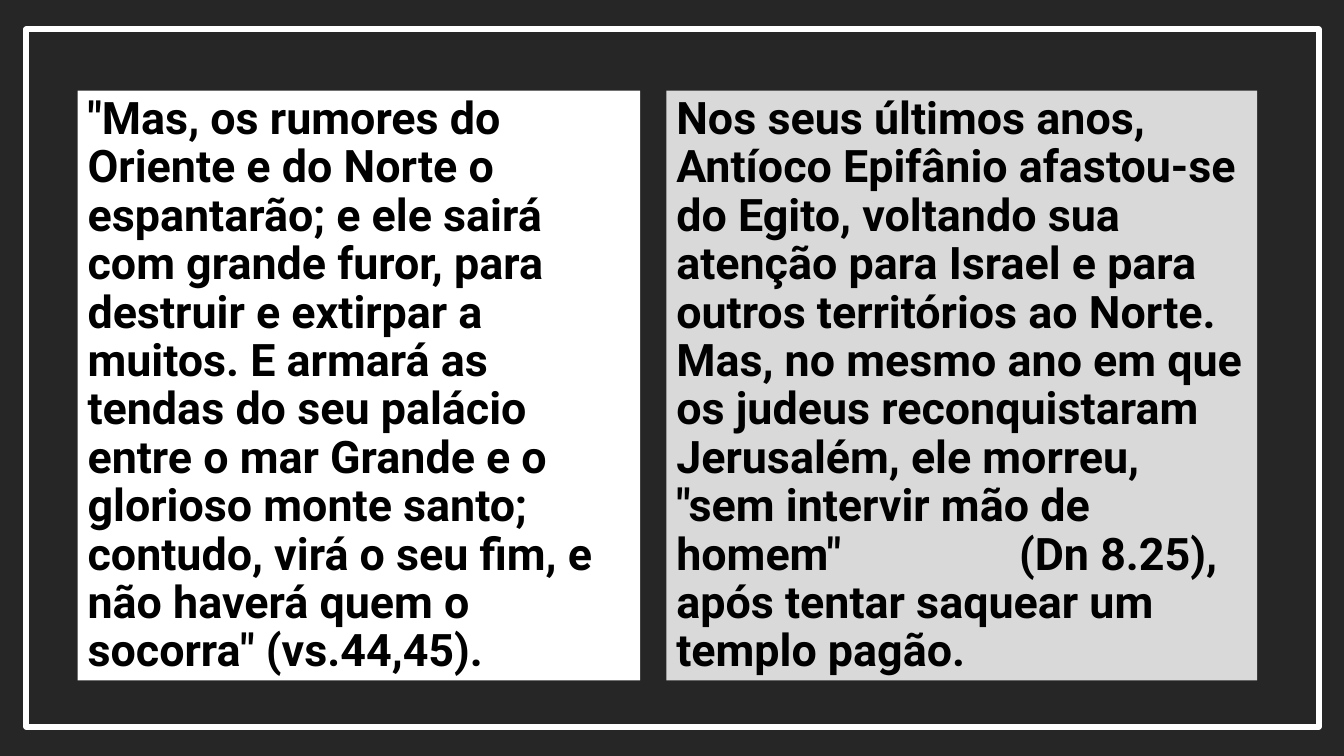
from dataclasses import dataclass

from lxml import etree
from pptx import Presentation
from pptx.dml.color import RGBColor
from pptx.enum.shapes import MSO_SHAPE
from pptx.enum.text import MSO_ANCHOR, PP_ALIGN
from pptx.oxml.ns import qn
from pptx.shapes.autoshape import Shape
from pptx.slide import Slide
from pptx.util import Inches, Pt

RECTANGLE = MSO_SHAPE.RECTANGLE
TOP = MSO_ANCHOR.TOP
LEFT = PP_ALIGN.LEFT


@dataclass(frozen=True)
class Theme:
    backdrop: str = "262626"
    frame: str = "FFFFFF"
    verse: str = "FFFFFF"
    comment: str = "D9D9D9"
    text: str = "000000"
    font: str = "Roboto"
    text_size: float = 32
    frame_width: float = 4


@dataclass(frozen=True)
class Box:
    left: float
    top: float
    width: float
    height: float
    fill: str | None = None
    line: str | None = None


@dataclass(frozen=True)
class Passage:
    box: Box
    text: str
    tab_stop: float | None = None


THEME = Theme()
SLIDE_WIDTH, SLIDE_HEIGHT = 13.33, 7.5
PANEL_TOP, PANEL_HEIGHT = 0.9, 5.85

BACKDROP = Box(0, 0, SLIDE_WIDTH, SLIDE_HEIGHT, fill=THEME.backdrop)
FRAME = Box(0.26, 0.29, 12.82, 6.92, line=THEME.frame)

PASSAGES = [
    Passage(
        Box(0.77, PANEL_TOP, 5.58, PANEL_HEIGHT, fill=THEME.verse),
        '"Mas, os rumores do Oriente e do Norte o espantarão; e ele sairá '
        "com grande furor, para destruir e extirpar a muitos. E armará as "
        "tendas do seu palácio entre o mar Grande e o glorioso monte santo; "
        'contudo, virá o seu fim, e não haverá quem o socorra" (vs.44,45).',
    ),
    Passage(
        Box(6.61, PANEL_TOP, 5.86, PANEL_HEIGHT, fill=THEME.comment),
        "Nos seus últimos anos, Antíoco Epifânio afastou-se do Egito, "
        "voltando sua atenção para Israel e para outros territórios ao Norte. "
        "Mas, no mesmo ano em que os judeus reconquistaram Jerusalém, ele "
        'morreu, "sem intervir mão de homem"\t(Dn 8.25), após tentar saquear '
        "um templo pagão.",
        tab_stop=3.4,
    ),
]


def draw_box(slide: Slide, box: Box) -> Shape:
    shape = slide.shapes.add_shape(
        RECTANGLE, Inches(box.left), Inches(box.top), Inches(box.width), Inches(box.height)
    )
    shape.shadow.inherit = False
    if box.fill:
        shape.fill.solid()
        shape.fill.fore_color.rgb = RGBColor.from_string(box.fill)
    else:
        shape.fill.background()
    if box.line:
        shape.line.color.rgb = RGBColor.from_string(box.line)
        shape.line.width = Pt(THEME.frame_width)
    else:
        shape.line.fill.background()
    return shape


def write_text(
    shape: Shape,
    text: str,
    *,
    size: float = THEME.text_size,
    color: str = THEME.text,
    bold: bool = True,
    tab_stop: float | None = None,
) -> None:
    frame = shape.text_frame
    frame.word_wrap = True
    frame.vertical_anchor = TOP
    paragraph = frame.paragraphs[0]
    paragraph.alignment = LEFT
    paragraph.line_spacing = 0.9
    paragraph.space_before = Pt(10)
    if tab_stop is not None:
        properties = paragraph._p.get_or_add_pPr()
        tabs = etree.SubElement(properties, qn("a:tabLst"))
        etree.SubElement(tabs, qn("a:tab"), pos=str(Inches(tab_stop)), algn="l")
    run = paragraph.add_run()
    run.text = text
    run.font.name = THEME.font
    run.font.size = Pt(size)
    run.font.bold = bold
    run.font.color.rgb = RGBColor.from_string(color)


def main() -> None:
    presentation = Presentation()
    presentation.slide_width = Inches(SLIDE_WIDTH)
    presentation.slide_height = Inches(SLIDE_HEIGHT)
    slide = presentation.slides.add_slide(presentation.slide_layouts[6])
    for box in (BACKDROP, FRAME):
        draw_box(slide, box)
    for passage in PASSAGES:
        write_text(draw_box(slide, passage.box), passage.text, tab_stop=passage.tab_stop)
    presentation.save("out.pptx")


if __name__ == "__main__":
    main()
